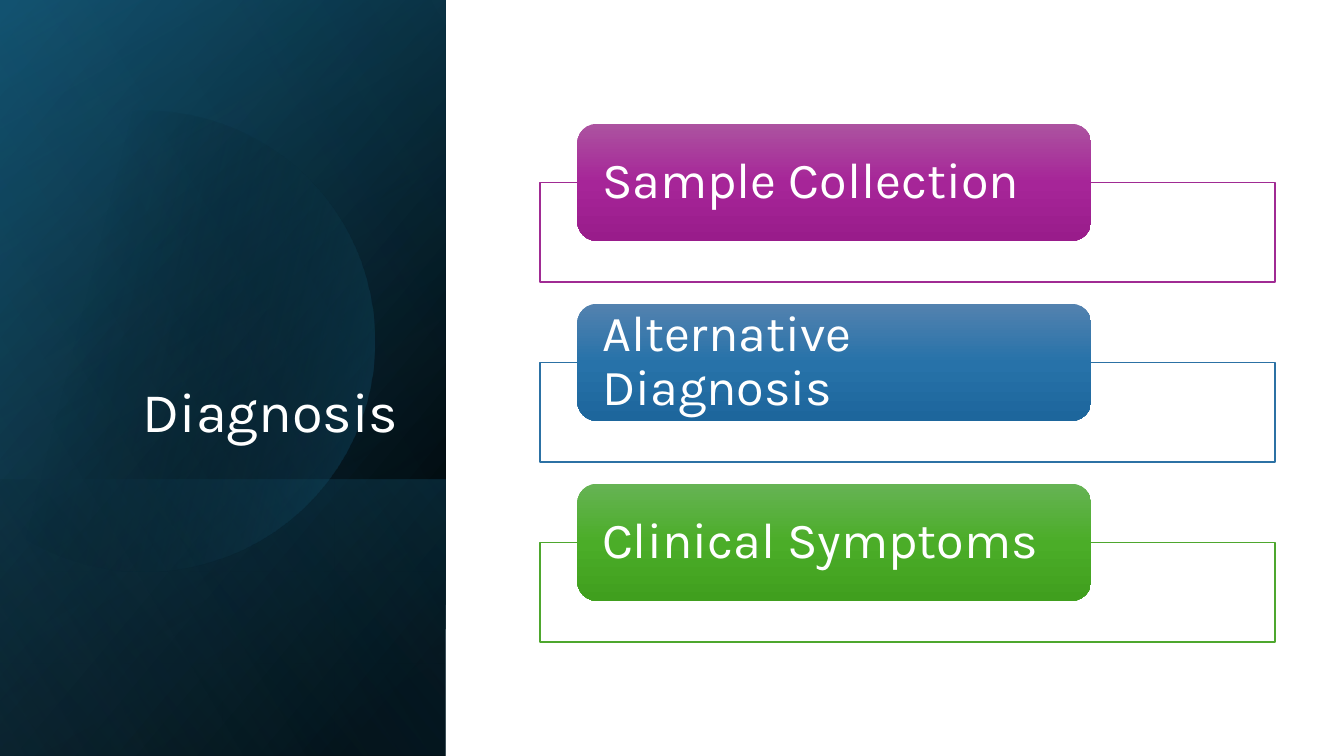
from lxml.etree import SubElement
from pptx import Presentation
from pptx.dml.color import RGBColor
from pptx.enum.shapes import MSO_SHAPE as Shape
from pptx.enum.text import MSO_ANCHOR as Anchor, MSO_AUTO_SIZE as AutoSize, PP_ALIGN as Align
from pptx.oxml.ns import qn
from pptx.util import Cm, Pt

FONT = "Karla"
WHITE = "FFFFFF"
TITLE = "Diagnosis"
CARDS = [
    ("Sample Collection", "A02B93", ("AC53A0", "A62598", "991C8B")),
    ("Alternative Diagnosis", "2C71A4", ("5382AF", "2772A9", "1D669C")),
    ("Clinical Symptoms", "4EA72E", ("66B354", "4BAD28", "409F1E")),
]

PAGE_WIDTH, PAGE_HEIGHT = 33.87, 19.05
PANEL_WIDTH = 11.23
LOWER_HEIGHT = 6.96
BASE = ([(8, "000000", 100), (100, "104862", 100)], 50)
TINT = ([(0, "000000", 0), (99, "156082", 46)], 30)
LOWER = ([(2, "156082", 29), (100, "000000", 30)], 130)
DISC = ([(29, "000000", 0), (100, "156082", 43)], 14)
GLOW = ([(0, "000000", 0), (99, "46B1E1", 11)], 120)

DISC_START = (3.78, 2.79)
DISC_SEGMENTS = [
    [(6.25, 2.84), (8.51, 4.5), (9.22, 6.99)],
    [(10.11, 10.08), (8.33, 13.28), (5.26, 14.17)],
    [(3.33, 14.73), (1.35, 14.25), (-0.08, 13.06)],
    [(-0.38, 12.78)],
    [(-0.38, 4.45)],
    [(0, 4.09)],
    [(0.58, 3.58), (1.27, 3.25), (2.03, 3.02)],
    [(2.62, 2.87), (3.2, 2.79), (3.78, 2.79)],
]
CURVE_STEPS = 20

OUTLINE_LEFT, OUTLINE_TOP, OUTLINE_WIDTH, OUTLINE_HEIGHT = 13.61, 4.6, 18.52, 2.51
CARD_LEFT, CARD_TOP, CARD_WIDTH, CARD_HEIGHT = 14.55, 3.12, 12.95, 2.95
CARD_PITCH = 4.535


def color(value):
    return RGBColor.from_string(value)


def paint_gradient(shape, stops, angle):
    shape.shadow.inherit = False
    shape.line.fill.background()
    shape.fill.background()
    properties = shape.element.spPr
    empty_fill = properties.find(qn("a:noFill"))
    gradient = SubElement(properties, qn("a:gradFill"), rotWithShape="1")
    stop_list = SubElement(gradient, qn("a:gsLst"))
    for position, value, opacity in stops:
        stop = SubElement(stop_list, qn("a:gs"), pos=str(position * 1000))
        tone = SubElement(stop, qn("a:srgbClr"), val=value)
        if opacity < 100:
            SubElement(tone, qn("a:alpha"), val=str(opacity * 1000))
    SubElement(gradient, qn("a:lin"), ang=str(angle * 60000), scaled="0")
    properties.replace(empty_fill, gradient)


def add_box(page, kind, left, top, width, height):
    box = page.shapes.add_shape(kind, Cm(left), Cm(top), Cm(width), Cm(height))
    box.shadow.inherit = False
    return box


def add_panel(page, height, gradient):
    left = (PANEL_WIDTH - height) / 2
    top = PAGE_HEIGHT - (height + PANEL_WIDTH) / 2
    panel = add_box(page, Shape.RECTANGLE, left, top, height, PANEL_WIDTH)
    panel.rotation = 90
    panel.element.spPr.xfrm.set("flipH", "1")
    paint_gradient(panel, *gradient)


def curve_point(controls, t):
    weights = ((1 - t) ** 3, 3 * t * (1 - t) ** 2, 3 * t * t * (1 - t), t ** 3)
    return tuple(sum(w * point[axis] for w, point in zip(weights, controls)) for axis in (0, 1))


def add_disc(page):
    points = [DISC_START]
    for segment in DISC_SEGMENTS:
        if len(segment) == 1:
            points += segment
        else:
            controls = [points[-1], *segment]
            points += [curve_point(controls, n / CURVE_STEPS) for n in range(1, CURVE_STEPS + 1)]
    corners = [(Cm(x), Cm(y)) for x, y in points]
    builder = page.shapes.build_freeform(*corners[0])
    builder.add_line_segments(corners[1:], close=True)
    paint_gradient(builder.convert_to_shape(), *DISC)


def write(frame, text, size, align, anchor):
    frame.word_wrap = True
    frame.auto_size = AutoSize.NONE
    frame.vertical_anchor = anchor
    para = frame.paragraphs[0]
    para.alignment = align
    para.line_spacing = 0.9
    span = para.add_run()
    span.text = text
    span.font.name = FONT
    span.font.size = Pt(size)
    span.font.color.rgb = color(WHITE)


def add_title(page):
    title = page.shapes.title
    title.left, title.top, title.width, title.height = Cm(1.63), Cm(4.67), Cm(8.66), Cm(6.65)
    write(title.text_frame, TITLE, 40, Align.RIGHT, Anchor.BOTTOM)
    title.element.getparent().append(title.element)


def add_card(page, index, text, line_color, tones):
    shift = index * CARD_PITCH
    outline = add_box(page, Shape.RECTANGLE, OUTLINE_LEFT, OUTLINE_TOP + shift,
                      OUTLINE_WIDTH, OUTLINE_HEIGHT)
    outline.fill.solid()
    outline.fill.fore_color.rgb = color(WHITE)
    outline.line.color.rgb = color(line_color)
    outline.line.width = Pt(1)
    card = add_box(page, Shape.ROUNDED_RECTANGLE, CARD_LEFT, CARD_TOP + shift,
                   CARD_WIDTH, CARD_HEIGHT)
    paint_gradient(card, [(n * 50, tone, 100) for n, tone in enumerate(tones)], 90)
    frame = card.text_frame
    frame.margin_left = frame.margin_right = Cm(0.48)
    frame.margin_top = frame.margin_bottom = Cm(0)
    write(frame, text, 36, Align.LEFT, Anchor.MIDDLE)


def main():
    deck = Presentation()
    deck.slide_width, deck.slide_height = Cm(PAGE_WIDTH), Cm(PAGE_HEIGHT)
    page = deck.slides.add_slide(deck.slide_layouts[5])
    for height, gradient in ((PAGE_HEIGHT, BASE), (PAGE_HEIGHT, TINT), (LOWER_HEIGHT, LOWER)):
        add_panel(page, height, gradient)
    add_disc(page)
    add_panel(page, PAGE_HEIGHT, GLOW)
    add_title(page)
    for index, card in enumerate(CARDS):
        add_card(page, index, *card)
    deck.save("out.pptx")


if __name__ == "__main__":
    main()
